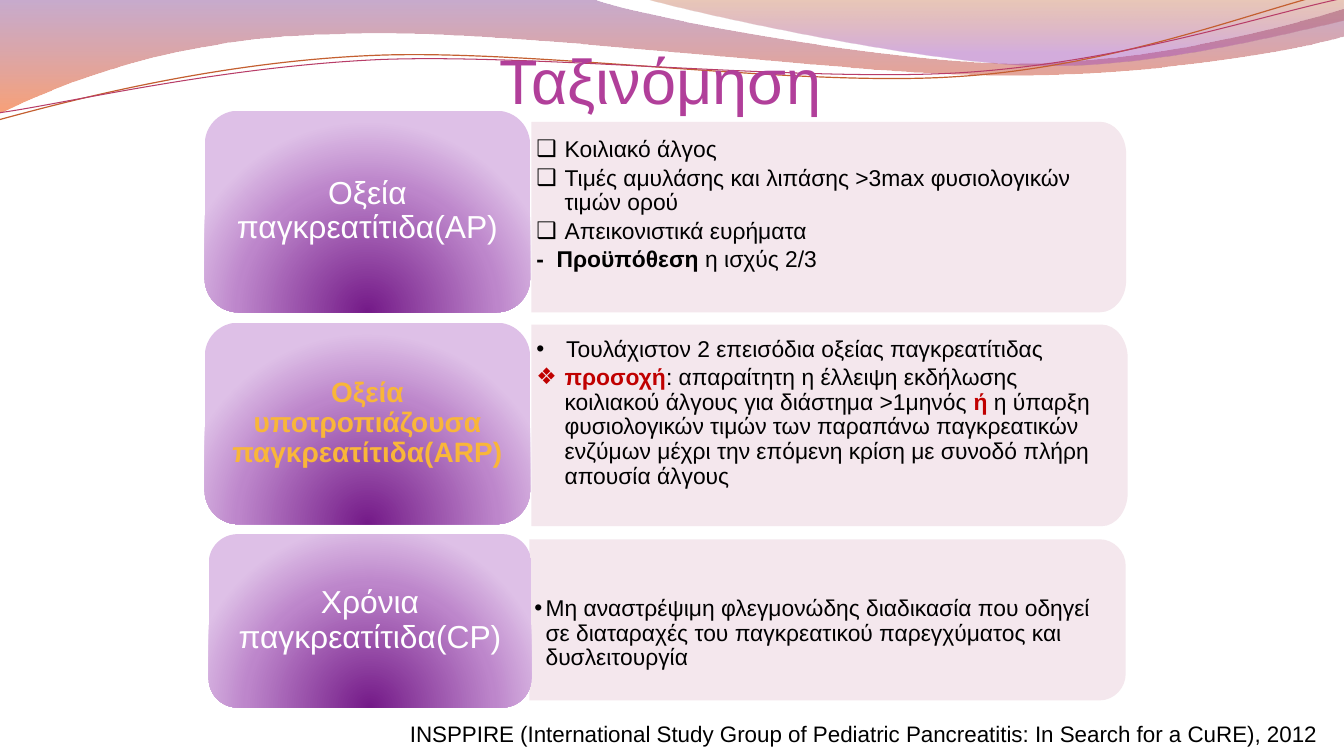
import dataclasses

import pptx
import pptx.dml.color
import pptx.enum.shapes
import pptx.enum.text
import pptx.oxml
import pptx.oxml.ns
import pptx.util

Cm = pptx.util.Cm
Pt = pptx.util.Pt
RGB = pptx.dml.color.RGBColor.from_string
Anchor = pptx.enum.text.MSO_ANCHOR
Align = pptx.enum.text.PP_ALIGN
qn = pptx.oxml.ns.qn
SPACE = pptx.oxml.ns.nsdecls("a")


@dataclasses.dataclass(frozen=True)
class Theme:
    font: str = "Arial"
    title: str = "B13F9A"
    text: str = "000000"
    white: str = "FFFFFF"
    gold: str = "F9B639"
    alert: str = "C00000"
    panel: str = "F4E7ED"
    # gradient stops: position, colour, opacity in percent
    card: tuple = ((0, "741A88", 100), (68, "BD86CB", 100), (100, "DEC0E7", 100))
    wave: tuple = ((0, "834591", 45), (100, "F35307", 55))
    crest: tuple = ((0, "B74915", 30), (80, "A14BB4", 45))
    head: float = 45
    label: float = 22.7
    strong: float = 20
    body: float = 16.3
    note: float = 16


T = Theme()
DOWN = '<a:lin ang="5400000" scaled="0"/>'
GLOW = ('<a:path path="circle"><a:fillToRect l="50000" t="130000" '
        'r="50000" b="-30000"/></a:path>')

# Each step is a line end (x, y) or a curve (two handles and an end), in cm.
WAVES = [
    (T.wave, [(0, 0), (14.91, -0.03), (16.1, 0.43, 22.48, 1.6, 25.68, 1.6),
              (28.91, 1.6, 32.46, 0.66, 33.86, 0.23), (33.91, 0.91),
              (33.3, 1.12, 29.46, 1.93, 25.25, 1.9),
              (21.06, 1.9, 12.93, 0.71, 8.71, 0.86),
              (4.37, 0.91, 1.55, 2.11, -0.03, 2.87)]),
    (T.crest, [(16.23, -0.03), (17.25, 0.28, 23.09, 1.57, 26.04, 1.65),
               (28.98, 1.75, 32.56, 0.81, 33.86, 0.53), (33.86, 0)]),
]
STRANDS = [
    ("C45F30", 0.85, [(-0.03, 3.02), (1.63, 2.57, 5.36, 1.57, 9.37, 1.4),
                      (13.39, 1.22, 20.07, 2.21, 24.13, 1.93),
                      (28.19, 1.68, 31.8, 0.2, 33.81, -0.25)]),
    ("B83D68", 0.75, [(0, 2.84), (1.6, 2.62, 5.54, 1.68, 9.6, 1.5),
                      (13.64, 1.35, 20.22, 2.08, 24.26, 1.83),
                      (28.32, 1.57, 31.88, 0.36, 33.88, -0.05)]),
]

# Each item is bullet, hanging indent in cm, and runs of (text, colour, bold).
ROWS = [
    dict(card=(5.16, 2.79, 8.2, 5.08), panel=(13.39, 3.07, 14.99, 4.8),
         label=("Οξεία παγκρεατίτιδα(ΑP)", T.label, T.white, False),
         pad=(0.23, 0.82),
         items=[("❑", 0.71, [("Κοιλιακό άλγος", T.text, False)]),
                ("❑", 0.71, [("Τιμές αμυλάσης και λιπάσης >3max φυσιολογικών "
                              "τιμών ορού", T.text, False)]),
                ("❑", 0.71, [("Απεικονιστικά ευρήματα", T.text, False)]),
                (None, 0.71, [("-  Προϋπόθεση ", T.text, True),
                              ("η ισχύς 2/3", T.text, False)])]),
    dict(card=(5.16, 8.13, 8.2, 5.08), panel=(13.39, 8.18, 15.03, 5.08),
         label=("Οξεία υποτροπιάζουσα παγκρεατίτιδα(ARP)", T.strong, T.gold, True),
         pad=(0.23, 0.84),
         items=[("•", 0.75, [("Τουλάχιστον 2 επεισόδια οξείας παγκρεατίτιδας",
                              T.text, False)]),
                ("❖", 0.71, [("προσοχή", T.alert, True),
                             (": απαραίτητη η έλλειψη εκδήλωσης κοιλιακού άλγους "
                              "για διάστημα >1μηνός ", T.text, False),
                             ("ή ", T.alert, True),
                             ("η ύπαρξη φυσιολογικών τιμών των παραπάνω "
                              "παγκρεατικών ενζύμων μέχρι την επόμενη κρίση με "
                              "συνοδό πλήρη απουσία άλγους", T.text, False)])]),
    dict(card=(5.26, 13.46, 8.13, 4.37), panel=(13.34, 13.59, 15.03, 4.06),
         label=("Χρόνια παγκρεατίτιδα(CP)", T.label, T.white, False),
         pad=(0.94, 0.23),
         items=[("•", 0.28, [("Μη αναστρέψιμη φλεγμονώδης διαδικασία που οδηγεί "
                              "σε διαταραχές του παγκρεατικού παρεγχύματος και "
                              "δυσλειτουργία", T.text, False)])]),
]


def style(obj, **vals):
    for key, val in vals.items():
        setattr(obj, key, val)


def place(shape, box):
    style(shape, **dict(zip(("left", "top", "width", "height"), map(Cm, box))))


def frame(shape, anchor, pads):
    """Set wrapping, anchor and the left, top, right, bottom insets in cm."""
    sides = ("margin_left", "margin_top", "margin_right", "margin_bottom")
    style(shape.text_frame, word_wrap=True, vertical_anchor=anchor,
          auto_size=pptx.enum.text.MSO_AUTO_SIZE.NONE,
          **dict(zip(sides, map(Cm, pads))))
    return shape.text_frame


def write(para, text, size, color, bold=False):
    run = para.add_run()
    run.text = text
    style(run.font, name=T.font, size=Pt(size), bold=bold)
    run.font.color.rgb = RGB(color)


def trace(slide, steps, close=True):
    """Draw an outline through the step ends, then bend the curved steps."""
    ends = [(Cm(step[-2]), Cm(step[-1])) for step in steps]
    pen = slide.shapes.build_freeform(*ends[0])
    pen.add_line_segments(ends[1:], close=close)
    shape = pen.convert_to_shape()
    shape.shadow.inherit = False
    lines = list(shape._element.iter(qn("a:lnTo")))
    for line, step in zip(lines, steps[1:]):
        if len(step) == 6:
            spots = "".join(
                f'<a:pt x="{Cm(x) - shape.left}" y="{Cm(y) - shape.top}"/>'
                for x, y in zip(step[::2], step[1::2]))
            bend = pptx.oxml.parse_xml(
                f"<a:cubicBezTo {SPACE}>{spots}</a:cubicBezTo>")
            line.getparent().replace(line, bend)
    return shape


def paint(shape, color):
    shape.fill.solid()
    shape.fill.fore_color.rgb = RGB(color)
    shape.line.fill.background()


def blend(shape, stops, kind):
    """Fill with a gradient whose stops may be see-through."""
    paint(shape, stops[0][1])
    marks = "".join(
        f'<a:gs pos="{pos * 1000}"><a:srgbClr val="{color}">'
        f'<a:alpha val="{alpha * 1000}"/></a:srgbClr></a:gs>'
        for pos, color, alpha in stops)
    grad = pptx.oxml.parse_xml(
        f'<a:gradFill {SPACE} rotWithShape="1">'
        f'<a:gsLst>{marks}</a:gsLst>{kind}</a:gradFill>')
    props = shape._element.spPr
    props.replace(props.find(qn("a:solidFill")), grad)


def draw_waves(slide):
    for stops, steps in WAVES:
        blend(trace(slide, steps), stops, DOWN)
    for color, width, steps in STRANDS:
        strand = trace(slide, steps, close=False)
        strand.fill.background()
        strand.line.color.rgb = RGB(color)
        strand.line.width = Pt(width)


def draw_panel(slide, box, items, pad):
    """Draw a panel rounded on its right side, with a bullet list."""
    x, y, w, h = box
    right, base = x + w, y + h
    rx, ry = 0.66, h / 6
    panel = trace(slide, [
        (x, y), (right - rx, y),
        (right - rx * 0.45, y, right, y + ry * 0.45, right, y + ry),
        (right, base - ry),
        (right, base - ry * 0.45, right - rx * 0.45, base, right - rx, base),
        (x, base)])
    paint(panel, T.panel)
    text = frame(panel, Anchor.MIDDLE, (0.13, pad[0], 0.28, pad[1]))
    for i, (mark, hang, runs) in enumerate(items):
        para = text.add_paragraph() if i else text.paragraphs[0]
        style(para, alignment=Align.LEFT, line_spacing=0.9, space_after=Pt(2.7))
        props = para._p.get_or_add_pPr()
        props.set("marL", str(Cm(hang)))
        props.set("indent", str(-Cm(hang)))
        if mark:
            for tag in (f'buFont {SPACE} typeface="{T.font}"',
                        f'buChar {SPACE} char="{mark}"'):
                props.append(pptx.oxml.parse_xml(f"<a:{tag}/>"))
        for words, color, bold in runs:
            write(para, words, T.body, color, bold)


def draw_card(slide, box, label):
    kind = pptx.enum.shapes.MSO_SHAPE.ROUNDED_RECTANGLE
    card = slide.shapes.add_shape(kind, *map(Cm, box))
    card.shadow.inherit = False
    blend(card, T.card, GLOW)
    para = frame(card, Anchor.MIDDLE, (0.18, 0.06, 0.18, 0.06)).paragraphs[0]
    style(para, alignment=Align.CENTER, line_spacing=0.9, space_after=Pt(10))
    write(para, *label)


def draw_title(slide, box, words):
    title = slide.shapes.title
    place(title, box)
    para = frame(title, Anchor.BOTTOM, (0, 0.13, 0, 0)).paragraphs[0]
    para.alignment = Align.CENTER
    write(para, words, T.head, T.title)
    slide.shapes._spTree.append(title._element)


def draw_note(slide, box, words):
    note = slide.shapes.add_textbox(*map(Cm, box))
    text = frame(note, Anchor.TOP, (0.25, 0.13, 0.1, 0.13))
    write(text.paragraphs[0], words, T.note, T.text)


def main():
    deck = pptx.Presentation()
    style(deck, slide_width=Cm(33.87), slide_height=Cm(19.05))
    slide = deck.slides.add_slide(deck.slide_layouts[5])
    draw_waves(slide)
    for row in ROWS:
        draw_panel(slide, row["panel"], row["items"], row["pad"])
        draw_card(slide, row["card"], row["label"])
    draw_title(slide, (1.27, 1.13, 30.76, 1.83), "Ταξινόμηση")
    draw_note(slide, (10.08, 18.02, 23.75, 0.94),
              "ΙNSPPIRE (International Study Group of Pediatric Pancreatitis: "
              "In Search for a CuRE), 2012")
    deck.save("out.pptx")


if __name__ == "__main__":
    main()
